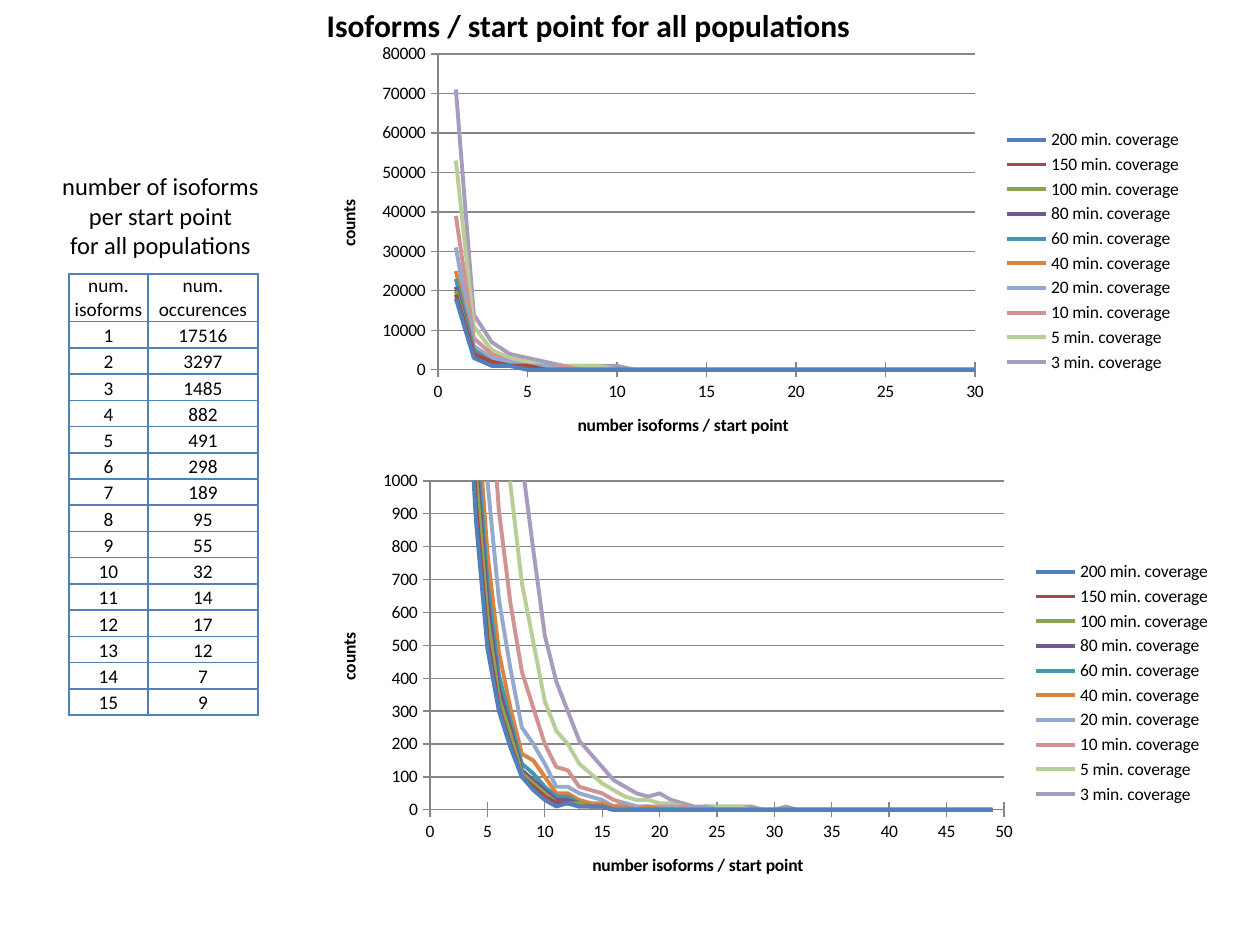
"""Build a slide with isoform counts per start point: one table and two scatter charts."""
from dataclasses import dataclass
from typing import Optional

from pptx import Presentation
from pptx.chart.data import XyChartData
from pptx.dml.color import RGBColor
from pptx.enum.chart import XL_CHART_TYPE, XL_LEGEND_POSITION, XL_TICK_MARK
from pptx.enum.text import MSO_ANCHOR, PP_ALIGN
from pptx.oxml import parse_xml
from pptx.oxml.ns import nsdecls, qn
from pptx.util import Emu, Pt

PX_PER_INCH = 126
FONT = "Calibri"
BLACK = RGBColor(0x00, 0x00, 0x00)
GRID_GREY = RGBColor(0x86, 0x86, 0x86)
BORDER_BLUE = RGBColor(0x4F, 0x81, 0xBD)
POINTS = 49


@dataclass(frozen=True)
class Box:
    left: int
    top: int
    width: int
    height: int

    def emu(self) -> list[Emu]:
        return [px(n) for n in (self.left, self.top, self.width, self.height)]


@dataclass(frozen=True)
class Coverage:
    minimum: int
    color: RGBColor
    counts: tuple[int, ...]


@dataclass(frozen=True)
class CountChart:
    frame: Box
    plot: Box
    x_max: int
    y_max: Optional[int]
    digits: int


@dataclass(frozen=True)
class Caption:
    frame: Box
    lines: tuple[str, ...]
    size: int
    bold: bool


COVERAGES = (
    Coverage(200, RGBColor(0x4F, 0x81, 0xBD), (
        17520, 3300, 1480, 880, 490, 300, 190, 100, 60, 30, 10, 20, 10, 10, 10)),
    Coverage(150, RGBColor(0xAA, 0x46, 0x43), (
        18550, 3560, 1600, 930, 520, 310, 200, 100, 70, 40, 20, 20, 10, 10, 10)),
    Coverage(100, RGBColor(0x89, 0xA5, 0x4E), (
        20110, 4000, 1760, 1020, 590, 340, 230, 110, 80, 50, 20, 20, 20, 10, 10)),
    Coverage(80, RGBColor(0x71, 0x58, 0x8F), (
        21060, 4250, 1870, 1080, 640, 370, 250, 120, 90, 60, 30, 30, 20, 10, 10)),
    Coverage(60, RGBColor(0x41, 0x98, 0xAF), (
        22530, 4570, 1990, 1160, 690, 410, 270, 140, 110, 70, 40, 40, 20, 10, 10)),
    Coverage(40, RGBColor(0xDB, 0x84, 0x3D), (
        25000, 5120, 2210, 1270, 780, 480, 310, 170, 150, 100, 50, 50, 30, 20, 20,
        10, 10, 0, 10)),
    Coverage(20, RGBColor(0x93, 0xA9, 0xCF), (
        30670, 6350, 2720, 1600, 1000, 640, 430, 250, 200, 140, 70, 70, 50, 40, 30,
        10, 20, 10, 10, 0, 10, 0, 0, 10)),
    Coverage(10, RGBColor(0xD1, 0x93, 0x92), (
        39210, 8130, 3530, 2100, 1390, 910, 630, 420, 310, 200, 130, 120, 70, 60, 50,
        30, 20, 10, 10, 10, 10, 10, 0, 10)),
    Coverage(5, RGBColor(0xB9, 0xCD, 0x96), (
        53140, 10910, 4880, 3020, 2050, 1380, 990, 690, 510, 330, 240, 200, 140, 110, 80,
        60, 40, 30, 30, 20, 20, 10, 0, 10, 10, 10, 10)),
    Coverage(3, RGBColor(0xA9, 0x9B, 0xBD), (
        70760, 14200, 6640, 4210, 2940, 1960, 1470, 1060, 790, 530, 390, 300, 210, 170,
        130, 90, 70, 50, 40, 50, 30, 20, 10, 10, 10, 10, 10, 10, 0, 0, 10)),
)
CHARTS = (
    CountChart(Box(312, 37, 883, 428), Box(438, 54, 537, 316), 30, None, -3),
    CountChart(Box(312, 462, 912, 442), Box(430, 481, 574, 329), 50, 1000, -1),
)
CAPTIONS = (
    Caption(Box(312, 0, 553, 50), ("Isoforms / start point for all populations",), 18, True),
    Caption(Box(49, 165, 223, 102),
            ("number of isoforms", "per start point", "for all populations"), 14, False),
)
TABLE_FRAME = Box(69, 274, 189, 440)
COLUMN_WIDTHS = (79, 110)
HEADER_HEIGHT = 46
HEADERS = ("num.\nisoforms", "num. occurences")
OCCURRENCES = (17516, 3297, 1485, 882, 491, 298, 189, 95, 55, 32, 14, 17, 12, 7, 9)


def px(length: int) -> Emu:
    return Emu(round(length * 914400 / PX_PER_INCH))


def style_font(font, size: int, bold: bool = False) -> None:
    font.name, font.size, font.bold = FONT, Pt(size), bold
    font.color.rgb = BLACK


def write_text(frame, text: str, size: int, bold: bool = False) -> None:
    frame.text = text
    for paragraph in frame.paragraphs:
        paragraph.alignment = PP_ALIGN.CENTER
        style_font(paragraph.font, size, bold)


def add_caption(slide, caption: Caption) -> None:
    frame = slide.shapes.add_textbox(*caption.frame.emu()).text_frame
    frame.word_wrap = False
    write_text(frame, "\n".join(caption.lines), caption.size, caption.bold)


def place_plot(chart, frame: Box, plot: Box) -> None:
    places = {
        "x": (plot.left - frame.left) / frame.width,
        "y": (plot.top - frame.top) / frame.height,
        "w": plot.width / frame.width,
        "h": plot.height / frame.height,
    }
    area = chart.element.find(".//" + qn("c:plotArea"))
    for layout in area.findall(qn("c:layout")):
        area.remove(layout)
    area.insert(0, parse_xml(
        f'<c:layout {nsdecls("c")}><c:manualLayout><c:layoutTarget val="inner"/>'
        '<c:xMode val="edge"/><c:yMode val="edge"/>'
        + "".join(f'<c:{key} val="{share:.4f}"/>' for key, share in places.items())
        + "</c:manualLayout></c:layout>"))


def style_axis(axis, title: str, maximum: Optional[int], gridlines: bool) -> None:
    axis.has_major_gridlines = gridlines
    axis.major_tick_mark = XL_TICK_MARK.CROSS
    axis.format.line.color.rgb = GRID_GREY
    if gridlines:
        axis.major_gridlines.format.line.color.rgb = GRID_GREY
    if maximum is not None:
        axis.minimum_scale, axis.maximum_scale = 0, maximum
    write_text(axis.axis_title.text_frame, title, 10, True)


def add_count_chart(slide, spot: CountChart) -> None:
    data = XyChartData()
    for coverage in COVERAGES:
        points = data.add_series(f"{coverage.minimum} min. coverage")
        padding = (0,) * (POINTS - len(coverage.counts))
        for isoforms, count in enumerate(coverage.counts + padding, start=1):
            points.add_data_point(isoforms, round(count, spot.digits))
    chart = slide.shapes.add_chart(
        XL_CHART_TYPE.XY_SCATTER_LINES_NO_MARKERS, *spot.frame.emu(), data).chart
    chart.has_title = False
    style_font(chart.font, 10)
    chart.has_legend = True
    chart.legend.position = XL_LEGEND_POSITION.RIGHT
    chart.legend.include_in_layout = False
    chart.plots[0].vary_by_categories = False
    style_axis(chart.category_axis, "number isoforms / start point", spot.x_max, False)
    style_axis(chart.value_axis, "counts", spot.y_max, True)
    for series, coverage in zip(chart.plots[0].series, COVERAGES):
        series.smooth = False
        series.format.line.width = Pt(2.25)
        series.format.line.color.rgb = coverage.color
    place_plot(chart, spot.frame, spot.plot)


def fill_cell(cell, text: str) -> None:
    cell.margin_left = cell.margin_right = cell.margin_top = cell.margin_bottom = 0
    cell.vertical_anchor = MSO_ANCHOR.BOTTOM
    write_text(cell.text_frame, text, 11)
    cell.fill.background()
    properties = cell._tc.get_or_add_tcPr()
    for index, side in enumerate(("lnL", "lnR", "lnT", "lnB")):
        properties.insert(index, parse_xml(
            f'<a:{side} {nsdecls("a")} w="{Pt(1)}"><a:solidFill>'
            f'<a:srgbClr val="{BORDER_BLUE}"/></a:solidFill></a:{side}>'))


def add_occurrence_table(slide) -> None:
    rows = [HEADERS, *((str(n), str(count)) for n, count in enumerate(OCCURRENCES, start=1))]
    table = slide.shapes.add_table(len(rows), len(HEADERS), *TABLE_FRAME.emu()).table
    table.first_row = table.horz_banding = False
    for column, width in zip(table.columns, COLUMN_WIDTHS):
        column.width = px(width)
    body_height = px(TABLE_FRAME.height - HEADER_HEIGHT) // len(OCCURRENCES)
    for row_index, texts in enumerate(rows):
        table.rows[row_index].height = body_height if row_index else px(HEADER_HEIGHT)
        for column_index, text in enumerate(texts):
            fill_cell(table.cell(row_index, column_index), text)


def main() -> None:
    presentation = Presentation()
    presentation.slide_width, presentation.slide_height = px(1260), px(945)
    slide = presentation.slides.add_slide(presentation.slide_layouts[6])
    for spot in CHARTS:
        add_count_chart(slide, spot)
    add_occurrence_table(slide)
    for caption in CAPTIONS:
        add_caption(slide, caption)
    presentation.save("out.pptx")


if __name__ == "__main__":
    main()
